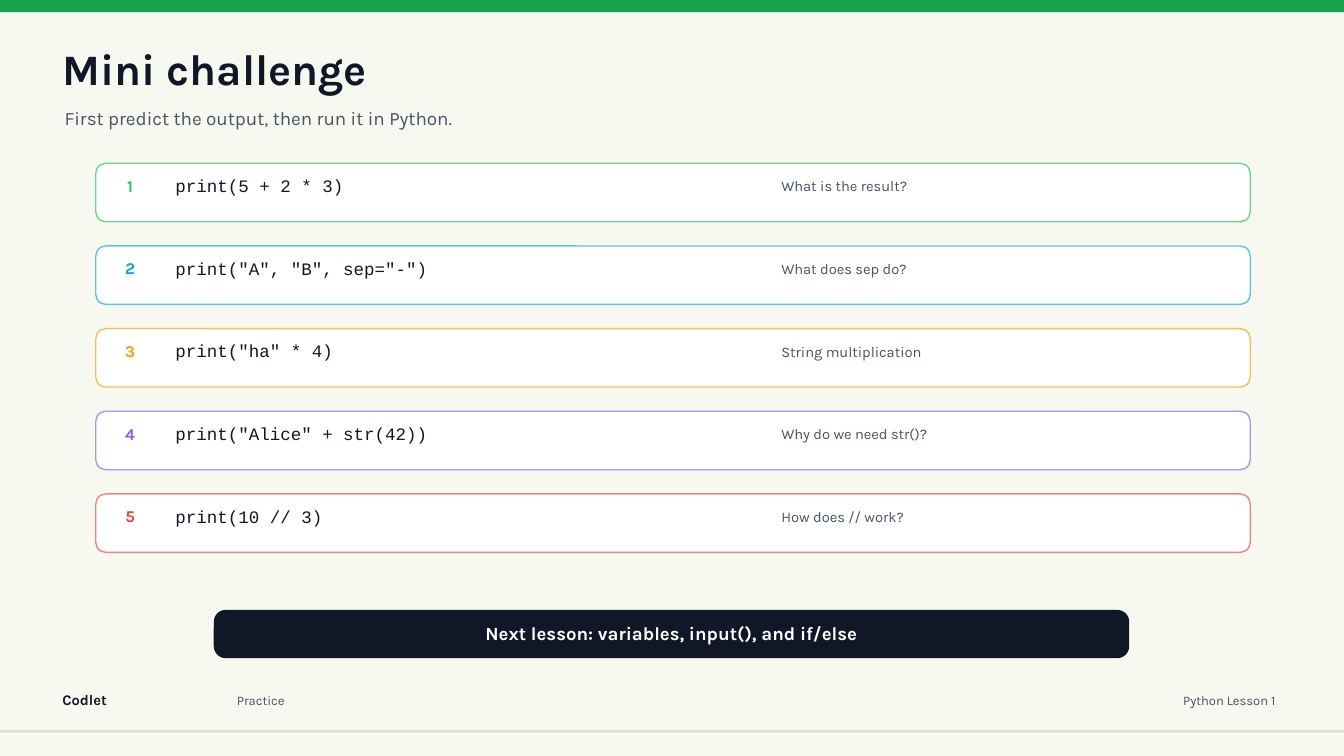
import pptx
import pptx.dml.color
import pptx.enum.shapes
import pptx.enum.text
import pptx.oxml
import pptx.oxml.ns
import pptx.util
from pptx.util import Inches

SHAPES = pptx.enum.shapes.MSO_SHAPE
ALIGN = pptx.enum.text.PP_ALIGN
INK = "101828"
MUTED = "475467"
WHITE = "FFFFFF"
CHALLENGES = [
    ("22C55E", "print(5 + 2 * 3)", "What is the result?"),
    ("0EA5E9", 'print("A", "B", sep="-")', "What does sep do?"),
    ("F59E0B", 'print("ha" * 4)', "String multiplication"),
    ("8B5CF6", 'print("Alice" + str(42))', "Why do we need str()?"),
    ("EF4444", "print(10 // 3)", "How does // work?"),
]


def paint(target, color):
    target.solid()
    target.fore_color.rgb = pptx.dml.color.RGBColor.from_string(color)


def write(box, text, size, color, bold=False, align=ALIGN.LEFT, font="Karla"):
    frame = box.text_frame
    frame.word_wrap = True
    frame.auto_size = pptx.enum.text.MSO_AUTO_SIZE.NONE
    frame.vertical_anchor = pptx.enum.text.MSO_ANCHOR.MIDDLE
    frame.margin_left = frame.margin_right = Inches(0)
    frame.margin_top = frame.margin_bottom = Inches(0)
    para = frame.paragraphs[0]
    para.alignment = align
    span = para.add_run()
    span.text = text
    span.font.name = font
    span.font.size = pptx.util.Pt(size)
    span.font.bold = bold
    paint(span.font.fill, color)


def add_label(page, left, top, width, height, *text, **style):
    box = page.shapes.add_textbox(
        Inches(left), Inches(top), Inches(width), Inches(height))
    write(box, *text, **style)


def add_title(page, left, top, width, height, text):
    title = page.shapes.title
    title.left, title.top = Inches(left), Inches(top)
    title.width, title.height = Inches(width), Inches(height)
    write(title, text, 31, INK, bold=True)


def add_panel(page, left, top, width, height, fill, radius=0, outline=None):
    kind = SHAPES.ROUNDED_RECTANGLE if radius else SHAPES.RECTANGLE
    panel = page.shapes.add_shape(
        kind, Inches(left), Inches(top), Inches(width), Inches(height))
    panel.shadow.inherit = False
    paint(panel.fill, fill)
    if radius:
        panel.adjustments[0] = radius / height
    if outline:
        panel.line.width = pptx.util.Pt(1)
        paint(panel.line.fill, outline)
        color = panel.line.fill._xPr.find(".//" + pptx.oxml.ns.qn("a:srgbClr"))
        alpha = pptx.oxml.parse_xml(
            "<a:alpha %s val='65000'/>" % pptx.oxml.ns.nsdecls("a"))
        color.append(alpha)
    else:
        panel.line.fill.background()


def add_challenge(page, number, top, color, code, hint):
    add_panel(page, 0.95, top, 11.45, 0.58, WHITE, radius=0.1, outline=color)
    add_label(page, 1.17, top + 0.14, 0.24, 0.16, str(number), 11.8, color,
              bold=True, align=ALIGN.CENTER)
    add_label(page, 1.74, top + 0.13, 5.7, 0.18, code, 12.5, INK,
              font="Courier New")
    add_label(page, 7.75, top + 0.15, 4.1, 0.15, hint, 10.5, MUTED)


def add_footer(page):
    add_label(page, 0.62, 6.83, 1.2, 0.22, "Codlet", 10.5, INK, bold=True)
    add_label(page, 2.35, 6.84, 6.5, 0.22, "Practice", 9.3, MUTED)
    add_label(page, 10.8, 6.84, 1.85, 0.22, "Python Lesson 1", 9.3, MUTED,
              align=ALIGN.RIGHT)


def main():
    deck = pptx.Presentation()
    deck.slide_width, deck.slide_height = Inches(13.33), Inches(7.5)
    page = deck.slides.add_slide(deck.slide_layouts.get_by_name("Title Only"))
    paint(page.background.fill, "F7F8EF")

    add_panel(page, 0, 0, 13.33, 0.12, "16A34A")
    add_panel(page, 0, 7.24, 13.33, 0.03, "D7E3D0")
    add_footer(page)
    add_title(page, 0.62, 0.42, 8.4, 0.52, "Mini challenge")
    add_label(page, 0.64, 1.02, 10.6, 0.3,
              "First predict the output, then run it in Python.", 13.5, MUTED)

    for index, challenge in enumerate(CHALLENGES):
        add_challenge(page, index + 1, 1.62 + 0.82 * index, *challenge)

    add_panel(page, 2.12, 6.05, 9.08, 0.48, INK, radius=0.12)
    add_label(page, 2.35, 6.2, 8.62, 0.16,
              "Next lesson: variables, input(), and if/else", 13.3, WHITE,
              bold=True, align=ALIGN.CENTER)
    deck.save("out.pptx")


if __name__ == "__main__":
    main()
